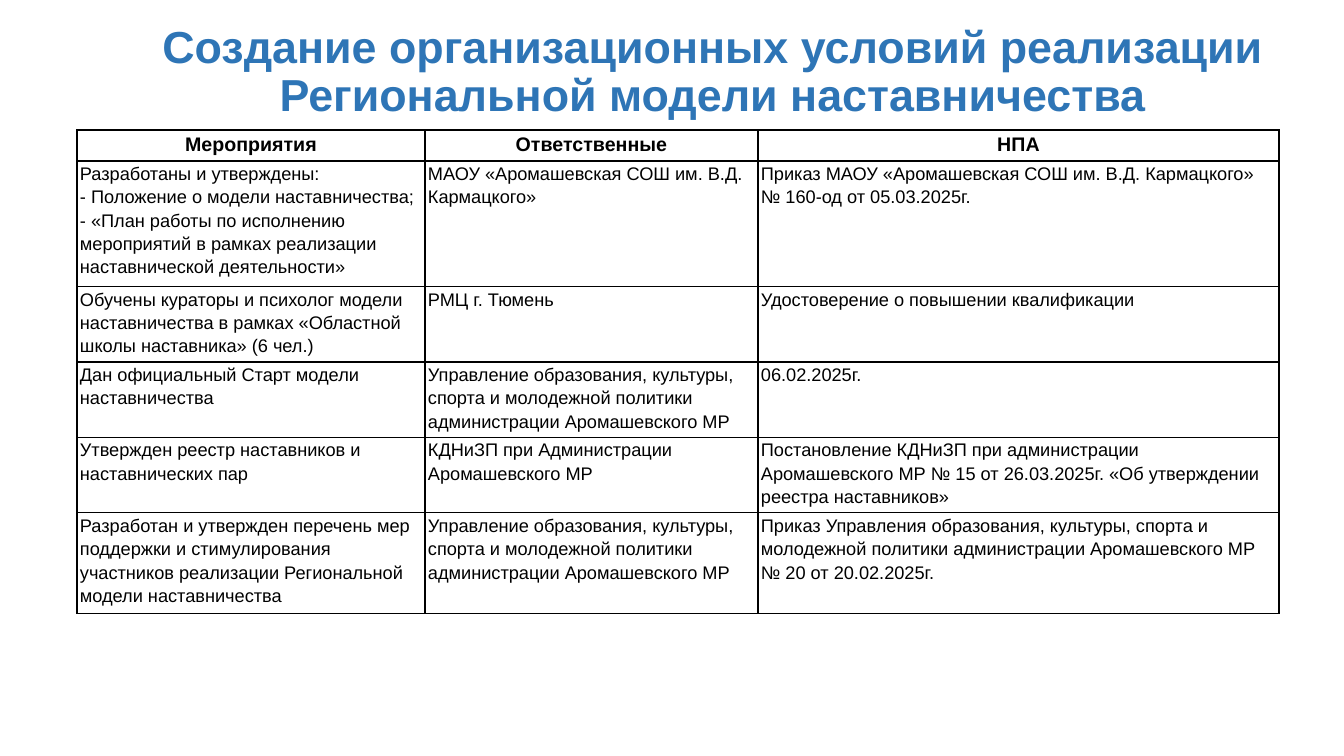
"""Slide with a table of measures for the regional mentoring model."""
from lxml import etree
from pptx import Presentation
from pptx import util as u
from pptx.dml.color import RGBColor
from pptx.enum import text
from pptx.oxml import ns

TITLE = "Создание организационных условий реализации Региональной модели наставничества"
OFFICE = "Управление образования, культуры, спорта и молодежной политики администрации Аромашевского МР"
ROWS = [
    ("Мероприятия", "Ответственные", "НПА"),
    ("Разработаны и утверждены:\v- Положение о модели наставничества;\n"
     "- «План работы по исполнению мероприятий в рамках реализации наставнической деятельности»",
     "МАОУ «Аромашевская СОШ им. В.Д. Кармацкого»",
     "Приказ МАОУ «Аромашевская СОШ им. В.Д. Кармацкого» № 160-од от 05.03.2025г."),
    ("Обучены кураторы и психолог модели наставничества в рамках «Областной школы наставника» (6 чел.)",
     "РМЦ г. Тюмень",
     "Удостоверение о повышении квалификации"),
    ("Дан официальный Старт модели наставничества", OFFICE, "06.02.2025г."),
    ("Утвержден реестр наставников и наставнических пар",
     "КДНиЗП при Администрации Аромашевского МР",
     "Постановление КДНиЗП при администрации Аромашевского МР № 15 от 26.03.2025г. "
     "«Об утверждении реестра наставников»"),
    ("Разработан и утвержден перечень мер поддержки и стимулирования участников реализации "
     "Региональной модели наставничества",
     OFFICE,
     "Приказ Управления образования, культуры, спорта и молодежной политики администрации "
     "Аромашевского МР № 20 от 20.02.2025г."),
]
WIDTHS = (348, 333, 521)
HEIGHTS = (31, 117, 70, 70, 70, 94)
COLORS = {"title": "2E75B6", "ink": "000000"}
FONT = "Arial"


def px(n):
    return u.Emu(round(n * 914400 / 100.8))


def style(frame, size, color, bold, align, space):
    for para in frame.paragraphs:
        para.alignment = align
        para.line_spacing = space
        for run in para.runs:
            font = run.font
            font.name, font.size, font.bold = FONT, u.Pt(size), bold
            font.color.rgb = RGBColor.from_string(COLORS[color])


def border(cell):
    props = cell._tc.get_or_add_tcPr()
    for i, side in enumerate(("lnL", "lnR", "lnT", "lnB")):
        line = etree.Element(ns.qn("a:" + side), w=str(u.Pt(1)))
        fill = etree.SubElement(line, ns.qn("a:solidFill"))
        etree.SubElement(fill, ns.qn("a:srgbClr"), val=COLORS["ink"])
        props.insert(i, line)


def add_title(slide):
    frame = slide.shapes.add_textbox(px(82), 0, px(1262), px(146)).text_frame
    frame.word_wrap = True
    frame.vertical_anchor = text.MSO_ANCHOR.MIDDLE
    frame.text = TITLE
    style(frame, 32, "title", True, text.PP_ALIGN.CENTER, 0.9)


def add_grid(slide):
    grid = slide.shapes.add_table(len(ROWS), len(WIDTHS), px(77), px(130),
                                  px(sum(WIDTHS)), px(sum(HEIGHTS))).table
    grid.horz_banding = False
    for col, width in zip(grid.columns, WIDTHS):
        col.width = px(width)
    for r, (row, height) in enumerate(zip(ROWS, HEIGHTS)):
        grid.rows[r].height = px(height)
        head = r == 0
        align = text.PP_ALIGN.CENTER if head else text.PP_ALIGN.LEFT
        for c, words in enumerate(row):
            cell = grid.cell(r, c)
            cell.margin_left = cell.margin_right = px(3)
            cell.margin_top = cell.margin_bottom = 0
            cell.fill.background()
            border(cell)
            cell.text_frame.text = words
            style(cell.text_frame, 14 if head else 13, "ink", head, align, 1.15)


def main():
    deck = Presentation()
    deck.slide_width, deck.slide_height = px(1344), px(756)
    slide = deck.slides.add_slide(deck.slide_layouts[6])
    add_title(slide)
    add_grid(slide)
    deck.save("out.pptx")


if __name__ == "__main__":
    main()
